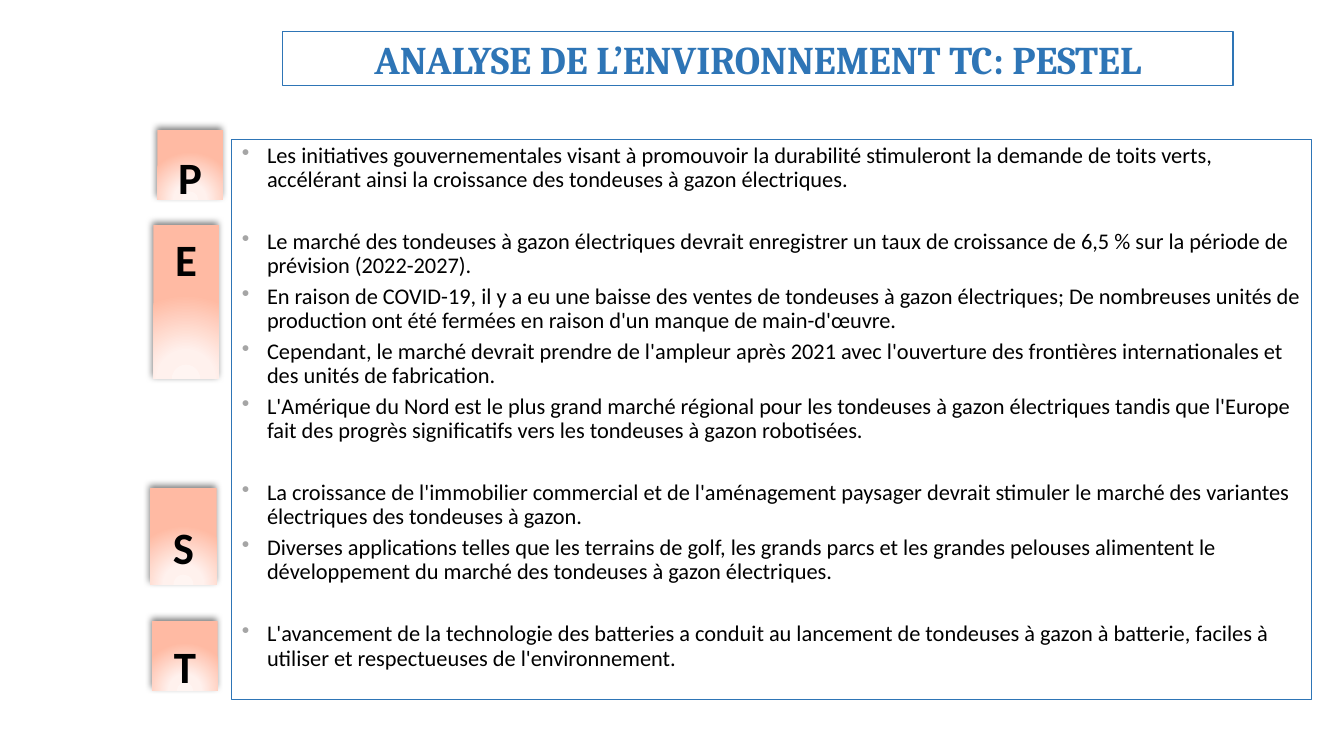
"""Builds a PESTEL analysis slide for the electric mower market."""
from dataclasses import dataclass

from pptx import Presentation
from pptx.dml.color import RGBColor
from pptx.enum.shapes import MSO_SHAPE as Shape
from pptx.enum.text import MSO_ANCHOR as Anchor, PP_ALIGN as Align
from pptx.oxml import parse_xml
from pptx.oxml.ns import nsdecls
from pptx.util import Inches, Pt


@dataclass(frozen=True)
class Theme:
    """Colours, fonts and type sizes of the slide."""
    accent: str = "2E75B6"
    text: str = "000000"
    bullet: str = "A5A5A5"
    tile_stops: tuple = ((0, "FFF5F2"), (34, "FFF1ED"), (100, "FFBAA3"))
    heading_font: str = "Cambria"
    body_font: str = "Calibri"
    title_size: int = 28
    letter_size: int = 32
    body_size: int = 16
    item_gap: float = 4.8
    group_gap: float = 27


THEME = Theme()

TILES = [
    ("E", (1.52, 2.23, 0.65, 1.53), 0.07),
    ("T", (1.51, 6.16, 0.65, 0.69), 0.18),
    ("P", (1.56, 1.29, 0.65, 0.69), 0.19),
    ("S", (1.49, 4.84, 0.66, 0.96), 0.32),
]

GROUPS = [
    ["Les initiatives gouvernementales visant à promouvoir la durabilité stimuleront la demande de toits verts, "
     "accélérant ainsi la croissance des tondeuses à gazon électriques."],
    ["Le marché des tondeuses à gazon électriques devrait enregistrer un taux de croissance de 6,5 % sur la "
     "période de prévision (2022-2027).",
     "En raison de COVID-19, il y a eu une baisse des ventes de tondeuses à gazon électriques; De nombreuses "
     "unités de production ont été fermées en raison d'un manque de main-d'œuvre.",
     "Cependant, le marché devrait prendre de l'ampleur après 2021 avec l'ouverture des frontières "
     "internationales et des unités de fabrication.",
     "L'Amérique du Nord est le plus grand marché régional pour les tondeuses à gazon électriques tandis que "
     "l'Europe fait des progrès significatifs vers les tondeuses à gazon robotisées."],
    ["La croissance de l'immobilier commercial et de l'aménagement paysager devrait stimuler le marché des "
     "variantes électriques des tondeuses à gazon.",
     "Diverses applications telles que les terrains de golf, les grands parcs et les grandes pelouses alimentent "
     "le développement du marché des tondeuses à gazon électriques."],
    ["L'avancement de la technologie des batteries a conduit au lancement de tondeuses à gazon à batterie, "
     "faciles à utiliser et respectueuses de l'environnement."],
]


def write(para, text, *, size, font=THEME.body_font, color=THEME.text, bold=False, align=Align.LEFT):
    """Write one formatted run into a paragraph."""
    para.alignment = align
    span = para.add_run()
    span.text = text
    span.font.name = font
    span.font.size = Pt(size)
    span.font.bold = bold
    span.font.color.rgb = RGBColor.from_string(color)


def add_framed_box(page, bounds, anchor=Anchor.TOP):
    """Add an outlined text box and return its text frame."""
    box = page.shapes.add_textbox(*map(Inches, bounds))
    box.line.color.rgb = RGBColor.from_string(THEME.accent)
    box.line.width = Pt(0.75)
    frame = box.text_frame
    frame.word_wrap = True
    frame.vertical_anchor = anchor
    return frame


def add_bullet(para):
    """Give a paragraph a coloured bullet with a hanging indent."""
    props = para._p.get_or_add_pPr()
    props.set("marL", str(Inches(0.25)))
    props.set("indent", str(-Inches(0.25)))
    props.append(parse_xml(f'<a:buClr {nsdecls("a")}><a:srgbClr val="{THEME.bullet}"/></a:buClr>'))
    props.append(parse_xml(f'<a:buChar {nsdecls("a")} char="•"/>'))


def add_findings(page, bounds, groups):
    """Add the framed list, with wider gaps between groups."""
    frame = add_framed_box(page, bounds)
    for group_index, group in enumerate(groups):
        for item_index, text in enumerate(group):
            first = group_index == item_index == 0
            para = frame.paragraphs[0] if first else frame.add_paragraph()
            add_bullet(para)
            para.line_spacing = 0.9
            if not first:
                para.space_before = Pt(THEME.item_gap if item_index else THEME.group_gap)
            write(para, text, size=THEME.body_size)


def style_tile(tile):
    """Give a tile its radial gradient and soft shadow."""
    tile.line.fill.background()
    tile.shadow.inherit = False
    stops = "".join(f'<a:gs pos="{place * 1000}"><a:srgbClr val="{color}"/></a:gs>'
                    for place, color in THEME.tile_stops)
    gradient = parse_xml(
        f'<a:gradFill {nsdecls("a")} rotWithShape="1"><a:gsLst>{stops}</a:gsLst><a:path path="circle">'
        '<a:fillToRect l="50000" t="155000" r="50000" b="-55000"/></a:path></a:gradFill>')
    shadow = parse_xml(
        f'<a:outerShdw {nsdecls("a")} blurRad="{Pt(5)}" dist="{Pt(2)}" dir="{245 * 60000}" rotWithShape="0">'
        f'<a:srgbClr val="{THEME.text}"><a:alpha val="50000"/></a:srgbClr></a:outerShdw>')
    props = tile._element.spPr
    props.find("{*}ln").addprevious(gradient)
    props.find("{*}effectLst").append(shadow)


def add_letter_tile(page, letter, bounds, top_inset):
    """Add a tile with its letter set at a given depth."""
    tile = page.shapes.add_shape(Shape.RECTANGLE, *map(Inches, bounds))
    style_tile(tile)
    frame = tile.text_frame
    frame.vertical_anchor = Anchor.TOP
    frame.margin_left = frame.margin_right = frame.margin_bottom = 0
    frame.margin_top = Inches(top_inset)
    write(frame.paragraphs[0], letter, size=THEME.letter_size, bold=True, align=Align.CENTER)


def main():
    """Build the slide and save it."""
    deck = Presentation()
    deck.slide_width, deck.slide_height = Inches(13.33), Inches(7.5)
    page = deck.slides.add_slide(deck.slide_layouts[6])
    title = add_framed_box(page, (2.8, 0.31, 9.43, 0.54), Anchor.MIDDLE)
    write(title.paragraphs[0], "ANALYSE DE L’ENVIRONNEMENT TC: PESTEL", size=THEME.title_size,
          font=THEME.heading_font, color=THEME.accent, bold=True, align=Align.CENTER)
    add_findings(page, (2.3, 1.38, 10.71, 5.56), GROUPS)
    for letter, bounds, top_inset in TILES:
        add_letter_tile(page, letter, bounds, top_inset)
    deck.save("out.pptx")


if __name__ == "__main__":
    main()
